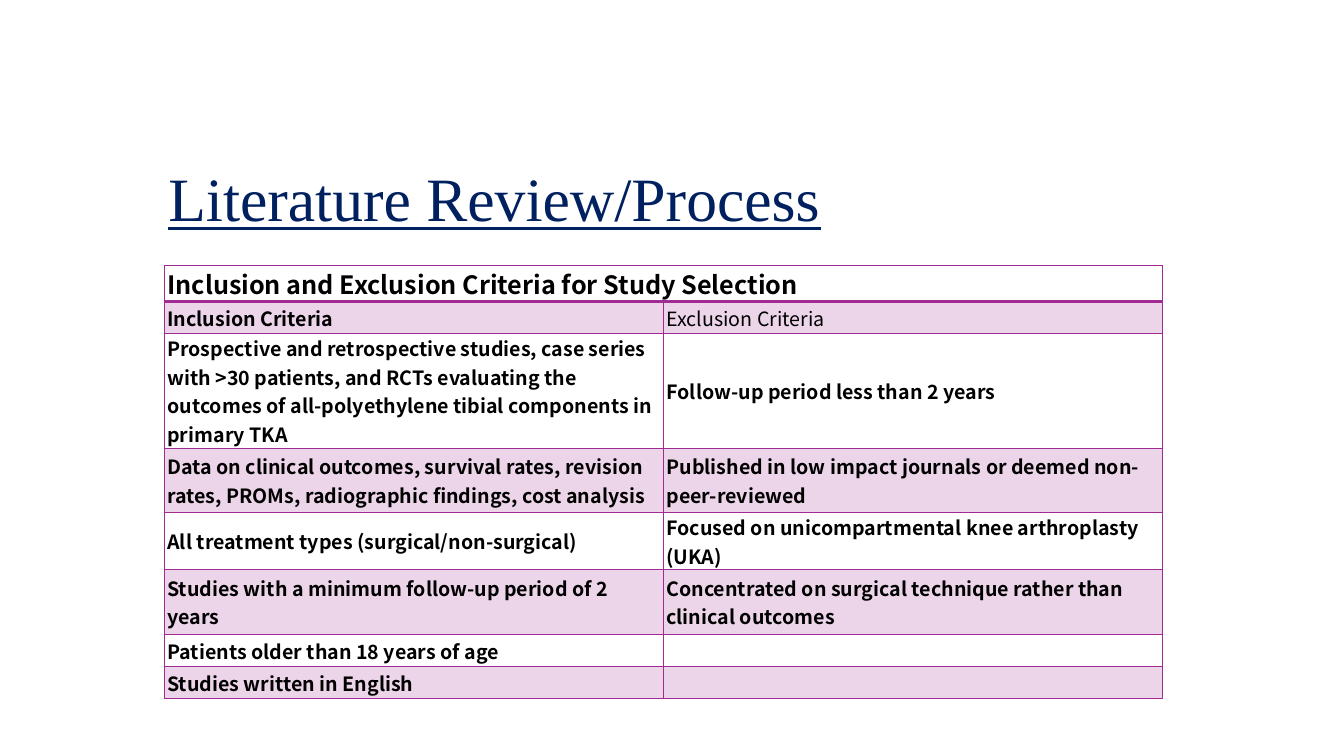
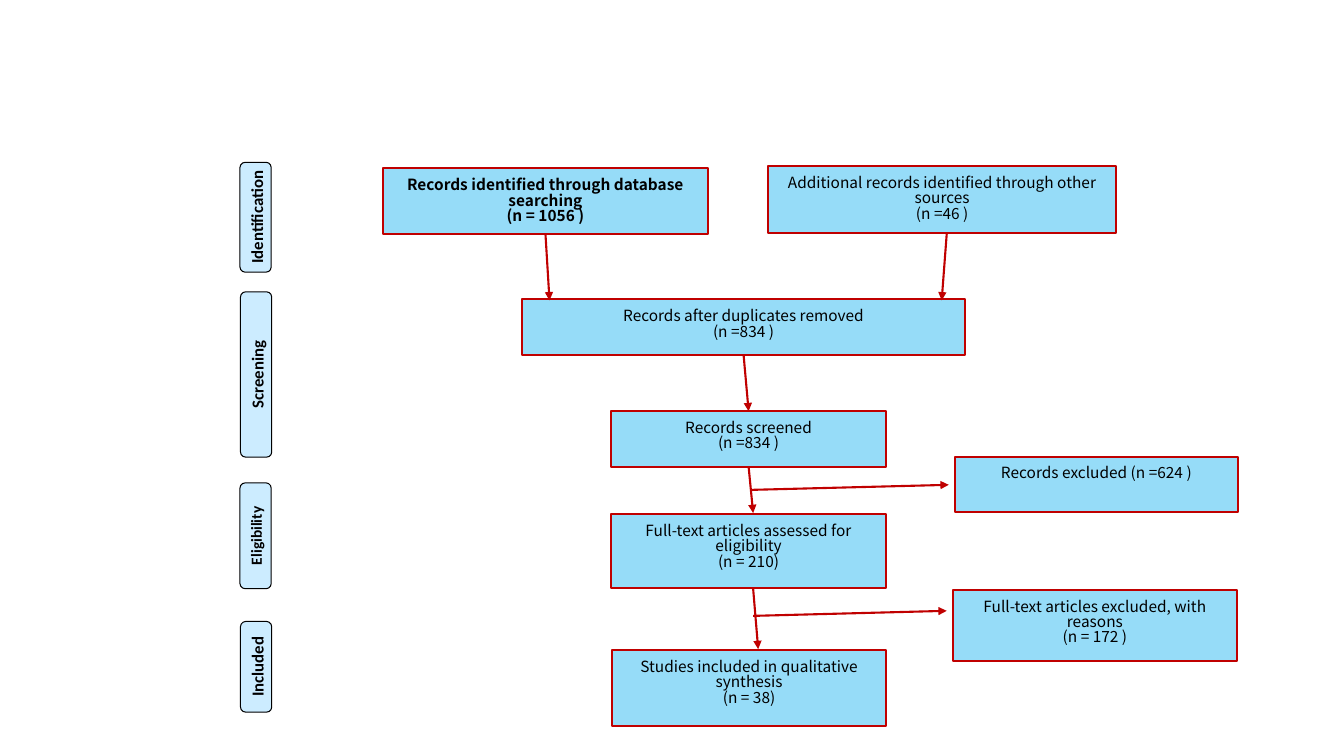
from dataclasses import dataclass

from lxml import etree
from pptx import Presentation
from pptx.dml.color import RGBColor
from pptx.enum.shapes import MSO_CONNECTOR, MSO_SHAPE
from pptx.enum.text import MSO_ANCHOR, MSO_AUTO_SIZE, PP_ALIGN
from pptx.oxml.ns import qn
from pptx.util import Pt

PX = 9144  # one hundredth of an inch
LEFT, CENTER = PP_ALIGN.LEFT, PP_ALIGN.CENTER
TOP, MIDDLE = MSO_ANCHOR.TOP, MSO_ANCHOR.MIDDLE
NO_AUTOFIT = MSO_AUTO_SIZE.NONE
STRAIGHT = MSO_CONNECTOR.STRAIGHT
RECTANGLE, ROUNDED = MSO_SHAPE.RECTANGLE, MSO_SHAPE.ROUNDED_RECTANGLE
TITLE_ONLY, BLANK = 5, 6
TOP_SIDE, BOTTOM_SIDE = 0, 2


@dataclass(frozen=True)
class Theme:
    title_font: str = "Times New Roman"
    body_font: str = "Noto Sans CJK SC"
    label_font: str = "Calibri"
    title_color: str = "002060"
    ink: str = "000000"
    table_accent: str = "A02B93"
    band_alpha: int = 20
    box_fill: str = "96DCF8"
    box_line: str = "C00000"
    label_fill: str = "CCECFF"
    title_size: int = 44
    heading_size: int = 18
    cell_size: int = 14
    box_size: int = 11
    label_size: int = 12
    box_spacing: float = 0.83


def rgb(value):
    return RGBColor.from_string(value)


def write(frame, text, *, size, font, color, bold=False, underline=False,
          align=LEFT, spacing=None):
    """Write each line of text as one formatted paragraph."""
    for index, line in enumerate(text.split("\n")):
        para = frame.add_paragraph() if index else frame.paragraphs[0]
        para.alignment = align
        if spacing:
            para.line_spacing = spacing
        span = para.add_run()
        span.text = line
        span.font.size = Pt(size)
        span.font.name = font
        span.font.bold = bold
        span.font.underline = underline
        span.font.color.rgb = rgb(color)


def add_solid_fill(parent, color):
    fill = etree.SubElement(parent, qn("a:solidFill"))
    etree.SubElement(fill, qn("a:srgbClr"), val=color)


def set_borders(cell, color, widths):
    """Draw the left, right, top and bottom borders, widths in points."""
    properties = cell._tc.get_or_add_tcPr()
    for index, (side, width) in enumerate(zip("LRTB", widths)):
        line = etree.Element(qn(f"a:ln{side}"), w=str(Pt(width)))
        add_solid_fill(line, color)
        properties.insert(index, line)


class SlideBuilder:
    def __init__(self, theme):
        self.theme = theme
        self.deck = Presentation()
        self.deck.slide_width = 1333 * PX
        self.deck.slide_height = 750 * PX
        self.page = None

    def new_page(self, layout):
        self.page = self.deck.slides.add_slide(self.deck.slide_layouts[layout])

    def title(self, text, left, top, width, height):
        theme, box = self.theme, self.page.shapes.title
        box.left, box.top = left * PX, top * PX
        box.width, box.height = width * PX, height * PX
        frame = box.text_frame
        frame.auto_size, frame.vertical_anchor = NO_AUTOFIT, TOP
        frame.margin_top = 10 * PX
        write(frame, text, size=theme.title_size, font=theme.title_font,
              color=theme.title_color, underline=True, spacing=0.9)

    def table(self, rows, left, top, column_width, heights):
        """Place a two-column table whose first row spans both columns."""
        frame = self.page.shapes.add_table(
            len(rows), 2, left * PX, top * PX,
            2 * column_width * PX, sum(heights) * PX)
        table = frame.table
        table.first_row = table.horz_banding = False
        for column in table.columns:
            column.width = column_width * PX
        for row, height in zip(table.rows, heights):
            row.height = height * PX
        table.cell(0, 0).merge(table.cell(0, 1))
        for row, texts in enumerate(rows):
            for column, text in enumerate(texts):
                self.cell(table.cell(row, column), text, row, column)

    def cell(self, cell, text, row, column):
        theme = self.theme
        cell.margin_left = cell.margin_right = 3 * PX
        cell.margin_top = cell.margin_bottom = 0
        cell.vertical_anchor = MIDDLE
        if row % 2:
            cell.fill.solid()
            cell.fill.fore_color.rgb = rgb(theme.table_accent)
            shade = cell._tc.tcPr.find(f".//{qn('a:srgbClr')}")
            etree.SubElement(shade, qn("a:alpha"),
                             val=str(theme.band_alpha * 1000))
        else:
            cell.fill.background()
        set_borders(cell, theme.table_accent,
                    (1, 1, 2 if row == 1 else 1, 2 if row == 0 else 1))
        if text:
            write(cell.text_frame, text, font=theme.body_font, color=theme.ink,
                  size=theme.cell_size if row else theme.heading_size,
                  bold=(row, column) != (1, 1))

    def shape(self, kind, place, fill, line, line_width, inset):
        box = self.page.shapes.add_shape(kind, *(value * PX for value in place))
        box.shadow.inherit = False
        box.fill.solid()
        box.fill.fore_color.rgb = rgb(fill)
        box.line.color.rgb = rgb(line)
        box.line.width = Pt(line_width)
        frame = box.text_frame
        frame.word_wrap, frame.vertical_anchor = True, TOP
        frame.margin_left = frame.margin_right = inset * PX
        frame.margin_top = frame.margin_bottom = inset * PX
        return box

    def flow_box(self, text, place, bold=False):
        theme = self.theme
        box = self.shape(RECTANGLE, place, theme.box_fill, theme.box_line, 1.5, 10)
        write(box.text_frame, text, size=theme.box_size, font=theme.body_font,
              color=theme.ink, bold=bold, align=CENTER,
              spacing=theme.box_spacing)
        return box

    def stage_label(self, text, top, length, size):
        """Place a label that reads upwards in the stage column."""
        theme = self.theme
        place = ((508 - length) // 2, top, length, 31)
        box = self.shape(ROUNDED, place, theme.label_fill, theme.ink, 0.75, 5)
        box.rotation = 270
        write(box.text_frame, text, size=size, font=theme.label_font,
              color=theme.ink, bold=True, align=CENTER)

    def arrow(self, begin, end, above=None, below=None):
        """Draw an arrow, joined to the boxes above and below when given."""
        line = self.page.shapes.add_connector(
            STRAIGHT, *(value * PX for value in begin + end))
        if above is not None:
            line.begin_connect(above, BOTTOM_SIDE)
        if below is not None:
            line.end_connect(below, TOP_SIDE)
        line.line.color.rgb = rgb(self.theme.box_line)
        line.line.width = Pt(1.5)
        etree.SubElement(line.line._get_or_add_ln(), qn("a:tailEnd"),
                         type="triangle")
        etree.SubElement(line._element.spPr, qn("a:effectLst"))


CRITERIA = [
    ("Inclusion and Exclusion Criteria for Study Selection", ""),
    ("Inclusion Criteria", "Exclusion Criteria"),
    ("Prospective and retrospective studies, case series with >30 patients, "
     "and RCTs evaluating the outcomes of all-polyethylene tibial components "
     "in primary TKA",
     "Follow-up period less than 2 years"),
    ("Data on clinical outcomes, survival rates, revision rates, PROMs, "
     "radiographic findings, cost analysis",
     "Published in low impact journals or deemed non-peer-reviewed"),
    ("All treatment types (surgical/non-surgical)",
     "Focused on unicompartmental knee arthroplasty (UKA)"),
    ("Studies with a minimum follow-up period of 2 years",
     "Concentrated on surgical technique rather than clinical outcomes"),
    ("Patients older than 18 years of age", ""),
    ("Studies written in English", ""),
]
ROW_HEIGHTS = (32, 32, 96, 64, 32, 64, 32, 32)


def criteria_page(builder):
    builder.new_page(TITLE_ONLY)
    builder.title("Literature Review/Process", 157, 157, 1150, 145)
    builder.table(CRITERIA, 163, 263, 495, ROW_HEIGHTS)


def flow_page(builder):
    builder.new_page(BLANK)
    regular, small = builder.theme.label_size, builder.theme.box_size
    for text, top, length, size in (
            ("Identification", 200, 109, regular),
            ("Screening", 356, 164, regular),
            ("Eligibility", 516, 105, small),
            ("Included", 646, 90, regular)):
        builder.stage_label(text, top, length, size)

    database = builder.flow_box(
        "Records identified through database searching\n(n = 1056 )",
        (380, 167, 322, 65), bold=True)
    builder.flow_box(
        "Additional records identified through other sources\n(n =46 )",
        (762, 165, 345, 66))
    unique = builder.flow_box(
        "Records after duplicates removed\n(n =834 )", (518, 297, 439, 55))
    screened = builder.flow_box(
        "Records screened\n(n =834 )", (606, 408, 273, 55))
    builder.flow_box("Records excluded (n =624 )", (947, 453, 281, 55))
    builder.flow_box(
        "Full-text articles assessed for eligibility\n(n = 210)",
        (606, 510, 273, 73))
    builder.flow_box(
        "Full-text articles excluded, with reasons\n(n = 172 )",
        (945, 585, 282, 71))
    builder.flow_box(
        "Studies included in qualitative synthesis\n(n = 38)",
        (607, 645, 272, 75))

    builder.arrow((540, 232), (545, 298), above=database)
    builder.arrow((939, 232), (934, 298))
    builder.arrow((737, 353), (742, 408), above=unique, below=screened)
    builder.arrow((742, 463), (747, 509), above=screened)
    builder.arrow((747, 584), (752, 644))
    builder.arrow((745, 486), (941, 481))
    builder.arrow((747, 611), (939, 606))


def main():
    builder = SlideBuilder(Theme())
    criteria_page(builder)
    flow_page(builder)
    builder.deck.save("out.pptx")


if __name__ == "__main__":
    main()
